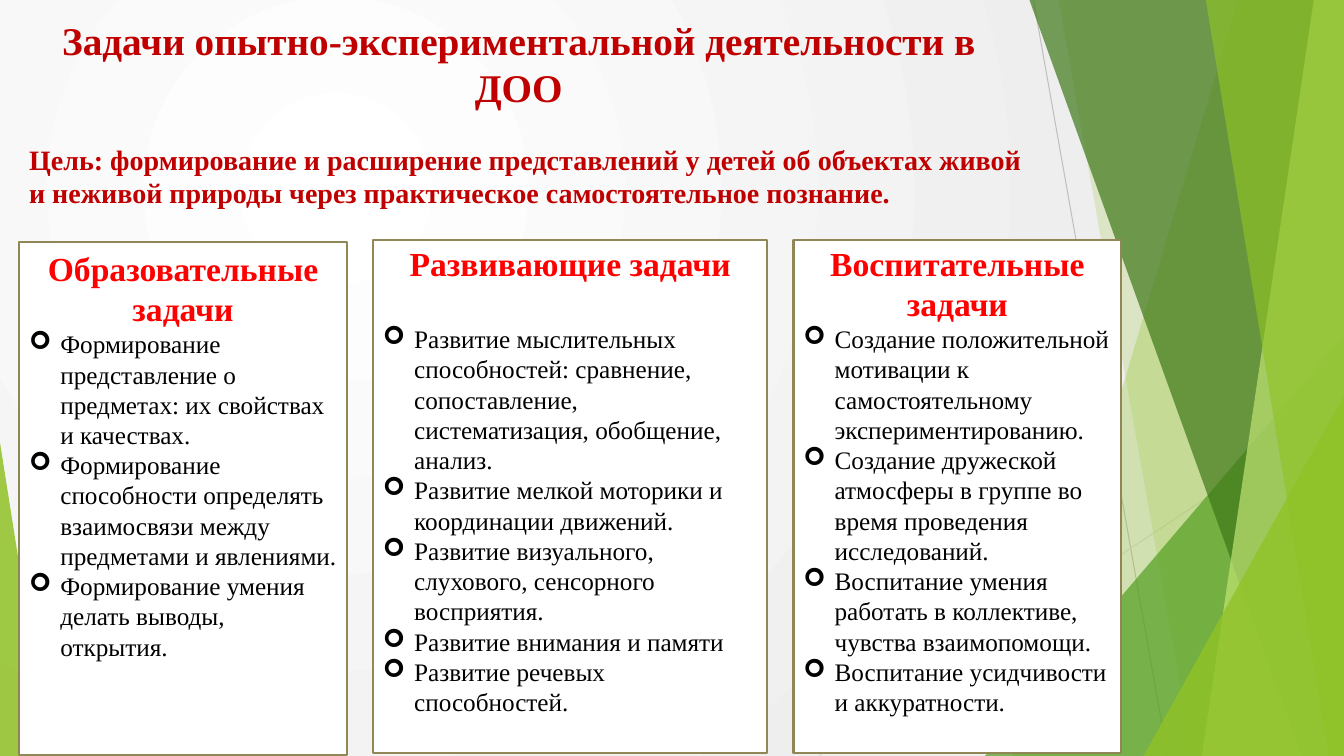
import pptx
import pptx.dml.color
import pptx.enum.shapes
import pptx.enum.text
import pptx.oxml
import pptx.oxml.ns
import pptx.util

Inches = pptx.util.Inches
Pt = pptx.util.Pt
ALIGN = pptx.enum.text.PP_ALIGN
NS = 'xmlns:a="http://schemas.openxmlformats.org/drawingml/2006/main"'
FONT = "Times New Roman"
WIDTH, HEIGHT = 13.33, 7.5

COLORS = {
    "white": "FFFFFF", "mist": "EEEEEE", "gray": "BFBFBF", "pale": "D9D9D9",
    "lime": "90C226", "green": "54A021", "forest": "3F7819", "light": "C0E474",
    "title": "C00000", "heading": "FF0000", "body": "000000", "frame": "918655",
}

RAYS = [
    (10.25, 0, 11.58, HEIGHT, "gray"),
    (WIDTH, 4.03, 8.12, HEIGHT, "pale"),
]
BACK_BLADES = [(12.28, 10.04, "lime", 30), (10.5, 11.83, "lime", 20)]
FRONT_BLADES = [
    (10.21, 12.91, "forest", 70),
    (13.03, 11.92, "light", 70),
    (11.96, 13.18, "lime", 65),
]
CARDS = [
    ((0.19, 2.4, 3.25, 5.09), 0.06, 0, "Образовательные задачи", [
        "Формирование представление о предметах: их свойствах и качествах.",
        "Формирование способности определять взаимосвязи между предметами и явлениями.",
        "Формирование умения делать выводы, открытия.",
    ]),
    ((3.7, 2.38, 3.91, 5.09), 0.03, 28.8, "Развивающие задачи", [
        "Развитие мыслительных способностей: сравнение, сопоставление, "
        "систематизация, обобщение, анализ.",
        "Развитие мелкой моторики и координации движений.",
        "Развитие визуального, слухового, сенсорного восприятия.",
        "Развитие внимания и памяти",
        "Развитие речевых способностей.",
    ]),
    ((7.87, 2.38, 3.25, 5.09), 0.03, 0, "Воспитательные задачи", [
        "Создание положительной мотивации к самостоятельному экспериментированию.",
        "Создание дружеской атмосферы в группе во время проведения исследований.",
        "Воспитание умения работать в коллективе, чувства взаимопомощи.",
        "Воспитание усидчивости и аккуратности.",
    ]),
]


def rgb(name):
    return pptx.dml.color.RGBColor.from_string(COLORS[name])


def paint(shape, color, opacity=100):
    shape.shadow.inherit = False
    shape.fill.solid()
    shape.fill.fore_color.rgb = rgb(color)
    shape.line.fill.background()
    if opacity < 100:
        tint = shape.fill._xPr.find(".//" + pptx.oxml.ns.qn("a:srgbClr"))
        tint.append(pptx.oxml.parse_xml(f'<a:alpha {NS} val="{opacity * 1000}"/>'))


def add_shape(slide, preset, box):
    return slide.shapes.add_shape(preset, *map(Inches, box))


def write(paragraph, text, size, color, align, bold=True):
    paragraph.alignment = align
    run = paragraph.add_run()
    run.text = text
    run.font.name = FONT
    run.font.size = Pt(size)
    run.font.bold = bold
    run.font.color.rgb = rgb(color)


def add_background(slide):
    fill = slide.background.fill
    fill.gradient()
    for stop, position, color in zip(fill.gradient_stops, (0, 1), ("white", "mist")):
        stop.position = position
        stop.color.rgb = rgb(color)
    linear = slide.element.find(".//" + pptx.oxml.ns.qn("a:lin"))
    linear.getparent().replace(linear, pptx.oxml.parse_xml(
        f'<a:path {NS} path="circle">'
        '<a:fillToRect l="50000" t="50000" r="100000" b="100000"/></a:path>'))


def add_ray(slide, x1, y1, x2, y2, color):
    ray = slide.shapes.add_connector(
        pptx.enum.shapes.MSO_CONNECTOR.STRAIGHT, *map(Inches, (x1, y1, x2, y2)))
    ray.line.color.rgb = rgb(color)
    ray.line.width = Pt(0.75)
    ray._element.spPr.append(pptx.oxml.parse_xml(f"<a:effectLst {NS}/>"))


def add_blade(slide, top_x, bottom_x, color, opacity):
    outline = slide.shapes.build_freeform(Inches(top_x), 0)
    corners = [(WIDTH, 0), (WIDTH, HEIGHT), (bottom_x, HEIGHT)]
    outline.add_line_segments([(Inches(x), Inches(y)) for x, y in corners])
    paint(outline.convert_to_shape(), color, opacity)


def add_corner(slide, box, apex, color, opacity):
    corner = add_shape(slide, pptx.enum.shapes.MSO_SHAPE.ISOSCELES_TRIANGLE, box)
    corner.adjustments[0] = apex
    paint(corner, color, opacity)


def add_decor(slide):
    for ray in RAYS:
        add_ray(slide, *ray)
    for blade in BACK_BLADES:
        add_blade(slide, *blade)
    add_corner(slide, (9.77, 3.33, 3.56, 4.17), 1, "green", 72)
    for blade in FRONT_BLADES:
        add_blade(slide, *blade)
    add_corner(slide, (11.34, 3.93, 1.99, 3.57), 1, "lime", 80)
    add_corner(slide, (0, 4.39, 0.49, 3.11), 0, "lime", 85)


def add_statement(slide, box, text, size, align):
    frame = slide.shapes.add_textbox(*map(Inches, box)).text_frame
    frame.word_wrap = True
    write(frame.paragraphs[0], text, size, "title", align)


def add_card(slide, box, top_inset, heading_gap, heading, tasks):
    card = add_shape(slide, pptx.enum.shapes.MSO_SHAPE.RECTANGLE, box)
    paint(card, "white")
    card.line.color.rgb = rgb("frame")
    card.line.width = Pt(1.5)
    frame = card.text_frame
    frame.word_wrap = True
    frame.vertical_anchor = pptx.enum.text.MSO_ANCHOR.TOP
    frame.margin_top = Inches(top_inset)
    write(frame.paragraphs[0], heading, 24, "heading", ALIGN.CENTER)
    frame.paragraphs[0].space_after = Pt(heading_gap)
    for task in tasks:
        item = frame.add_paragraph()
        write(item, task, 18, "body", ALIGN.LEFT, bold=False)
        layout = item._p.get_or_add_pPr()
        layout.set("marL", str(Inches(0.31)))
        layout.set("indent", str(Inches(-0.31)))
        layout.append(pptx.oxml.parse_xml(f'<a:buFont {NS} typeface="Wingdings"/>'))
        layout.append(pptx.oxml.parse_xml(f'<a:buChar {NS} char="➢"/>'))


def main():
    deck = pptx.Presentation()
    deck.slide_width, deck.slide_height = Inches(WIDTH), Inches(HEIGHT)
    slide = deck.slides.add_slide(deck.slide_layouts[6])
    add_background(slide)
    add_decor(slide)
    add_statement(slide, (0.13, 0.11, 10.03, 1.51),
                  "Задачи опытно-экспериментальной деятельности в ДОО", 28, ALIGN.CENTER)
    for card in CARDS:
        add_card(slide, *card)
    add_statement(slide, (0.19, 1.36, 10.19, 0.77),
                  "Цель: формирование и расширение представлений у детей об объектах живой "
                  "и неживой природы через практическое самостоятельное познание.",
                  20, ALIGN.LEFT)
    deck.save("out.pptx")


if __name__ == "__main__":
    main()
